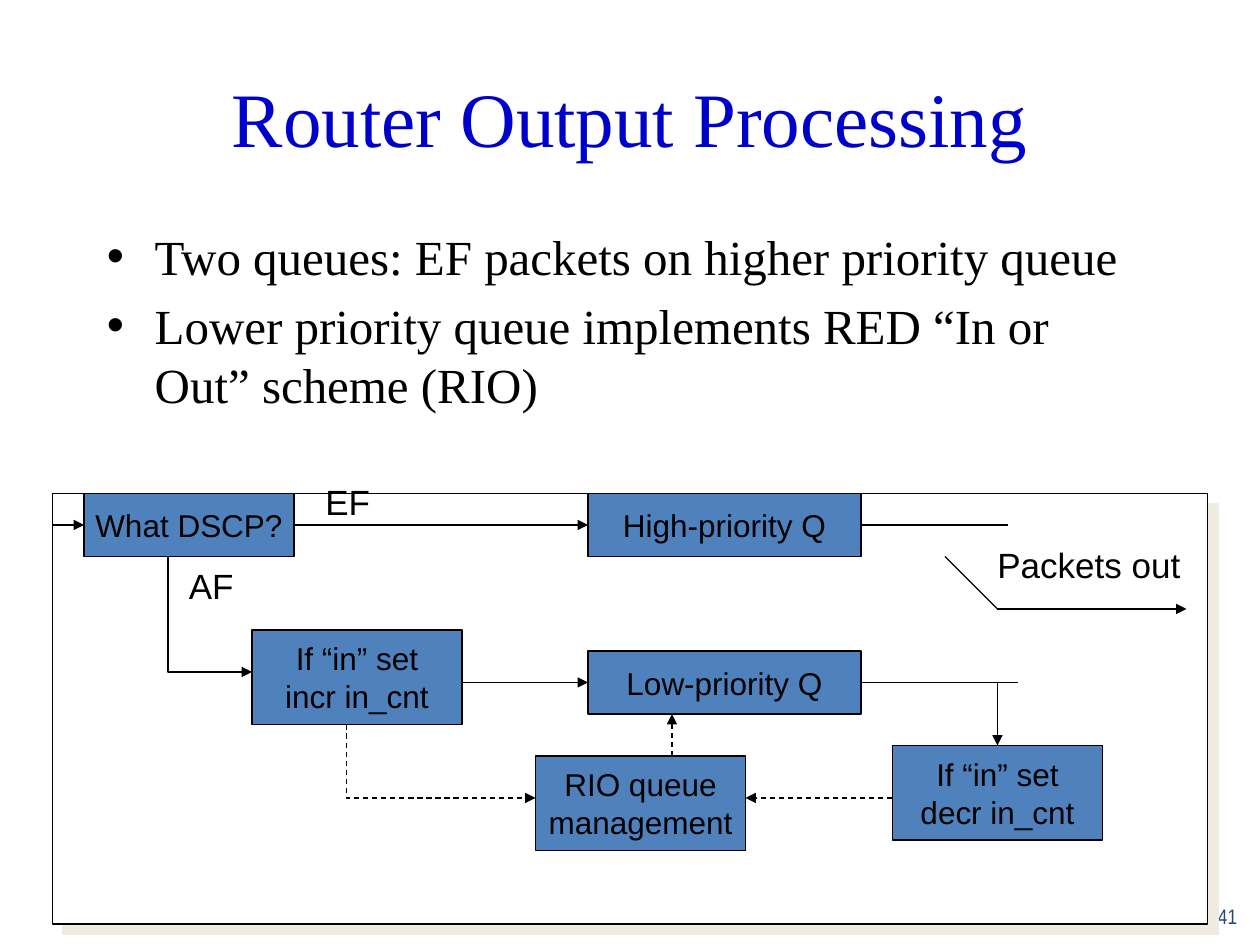
from lxml import etree
from pptx import Presentation
from pptx.dml.color import RGBColor
from pptx.enum.dml import MSO_LINE
from pptx.enum.shapes import MSO_CONNECTOR, MSO_SHAPE
from pptx.enum.text import MSO_ANCHOR, MSO_AUTO_SIZE, PP_ALIGN
from pptx.oxml.ns import qn
from pptx.util import Inches, Pt

LEFT, CENTER, RIGHT = PP_ALIGN.LEFT, PP_ALIGN.CENTER, PP_ALIGN.RIGHT
TOP, MIDDLE, BOTTOM = MSO_ANCHOR.TOP, MSO_ANCHOR.MIDDLE, MSO_ANCHOR.BOTTOM
RECT, STRAIGHT, DASH = MSO_SHAPE.RECTANGLE, MSO_CONNECTOR.STRAIGHT, MSO_LINE.DASH
GROW = MSO_AUTO_SIZE.SHAPE_TO_FIT_TEXT
COLORS = {"title": "0000CC", "ink": "000000", "box": "4F81BD",
          "panel": "FFFFFF", "shadow": "EEECE1", "number": "1F497D"}
C = {name: RGBColor.from_string(value) for name, value in COLORS.items()}

prs = Presentation()
prs.slide_width, prs.slide_height = Inches(10), Inches(7.5)
slide = prs.slides.add_slide(prs.slide_layouts[5])
shapes = slide.shapes
U = prs.slide_width // 120  # grid of 120 columns by 90 rows


def grid(*cells):
    return [int(cell * U) for cell in cells]


def write(s, lines, size, font, color, align=LEFT, anchor=TOP, wrap=True):
    tf = s.text_frame
    tf.word_wrap, tf.vertical_anchor = wrap, anchor
    tf.text = "\n".join(lines)
    for p in tf.paragraphs:
        p.alignment = align
        for key, value in {"size": Pt(size), "name": font}.items():
            setattr(p.runs[0].font, key, value)
        p.runs[0].font.color.rgb = C[color]


# Title
s = shapes.title
s.left, s.top, s.width, s.height = grid(6, 3.6, 108, 15)
write(s, ["Router Output Processing"], 44, "Times New Roman", "title", CENTER, MIDDLE)

# Bullets
s = shapes.add_textbox(*grid(9, 21, 102, 20.25))
write(s, ["Two queues: EF packets on higher priority queue",
          "Lower priority queue implements RED “In or Out” scheme (RIO)"],
      28, "Times New Roman", "ink")
for p in s.text_frame.paragraphs:
    p.space_before = Pt(5.6)
    pPr = p._p.get_or_add_pPr()
    pPr.set("marL", str(Inches(0.38)))
    pPr.set("indent", str(-Inches(0.38)))
    etree.SubElement(pPr, qn("a:buFont"), typeface="Arial")
    etree.SubElement(pPr, qn("a:buChar"), char="•")

# Slide number
s = shapes.add_textbox(*grid(94, 83, 25, 6))
write(s, ["41"], 12, "Arial Narrow", "number", RIGHT, BOTTOM)

# Panel and process boxes: column, row, columns, rows, fill, lines
boxes = [
    (5, 47, 110, 41, "panel", []),
    (8, 47, 20, 6, "box", ["What DSCP?"]),
    (24, 60, 20, 9, "box", ["If “in” set", "incr in_cnt"]),
    (56, 47, 26, 6, "box", ["High-priority Q"]),
    (56, 62, 26, 6, "box", ["Low-priority Q"]),
    (85, 71, 20, 9, "box", ["If “in” set", "decr in_cnt"]),
    (51, 72, 20, 9, "box", ["RIO queue", "management"]),
]
for x, y, w, h, fill, lines in boxes:
    s = shapes.add_shape(RECT, *grid(x, y, w, h))
    s.shadow.inherit = False
    s.fill.solid()
    s.fill.fore_color.rgb = C[fill]
    s.line.color.rgb, s.line.width = C["ink"], Pt(0.75)
    if lines:
        write(s, lines, 18, "Arial", "ink", CENTER, MIDDLE, False)
    else:
        effects = s.element.spPr.find(qn("a:effectLst"))
        shadow = etree.SubElement(effects, qn("a:outerShdw"), dist=str(Pt(8.5)),
                                  dir=str(45 * 60000), algn="ctr", rotWithShape="0")
        etree.SubElement(shadow, qn("a:srgbClr"), val=COLORS["shadow"])

# Flow lines: points, arrow at the end, dashed
flows = [
    ([(5, 50), (8, 50)], True, False),
    ([(28, 50), (56, 50)], True, False),
    ([(16, 53), (16, 64), (24, 64)], True, False),
    ([(44, 65), (56, 65)], True, False),
    ([(82, 50), (96, 50)], False, False),
    ([(82, 65), (97, 65)], False, False),
    ([(95, 65), (95, 71)], True, False),
    ([(33, 69), (33, 76), (51, 76)], True, True),
    ([(85, 76), (71, 76)], True, True),
    ([(64, 72), (64, 68)], True, True),
    ([(95, 58), (113, 58)], True, False),
    ([(95, 58), (90, 53)], False, False),
]
for points, arrow, dashed in flows:
    if len(points) == 2:
        s = shapes.add_connector(STRAIGHT, *grid(*points[0], *points[1]))
    else:
        outline = shapes.build_freeform(*points[0], scale=U)
        outline.add_line_segments(points[1:], close=False)
        s = outline.convert_to_shape()
        s.fill.background()
    s.line.color.rgb, s.line.width = C["ink"], Pt(0.75)
    if dashed:
        s.line.dash_style = DASH
    if arrow:
        ln = s.element.spPr.find(qn("a:ln"))
        etree.SubElement(ln, qn("a:tailEnd"), type="triangle")
    etree.SubElement(s.element.spPr, qn("a:effectLst"))

# Flow labels, each box growing with its single line
for x, y, w, label in [(93.8, 51.2, 20, "Packets out"),
                       (29.8, 45.2, 6.7, "EF"), (16.8, 53.2, 6.7, "AF")]:
    s = shapes.add_textbox(*grid(x, y, w, 5.2))
    write(s, [label], 20, "Arial", "ink", wrap=False)
    s.text_frame.auto_size = GROW

prs.save("out.pptx")
